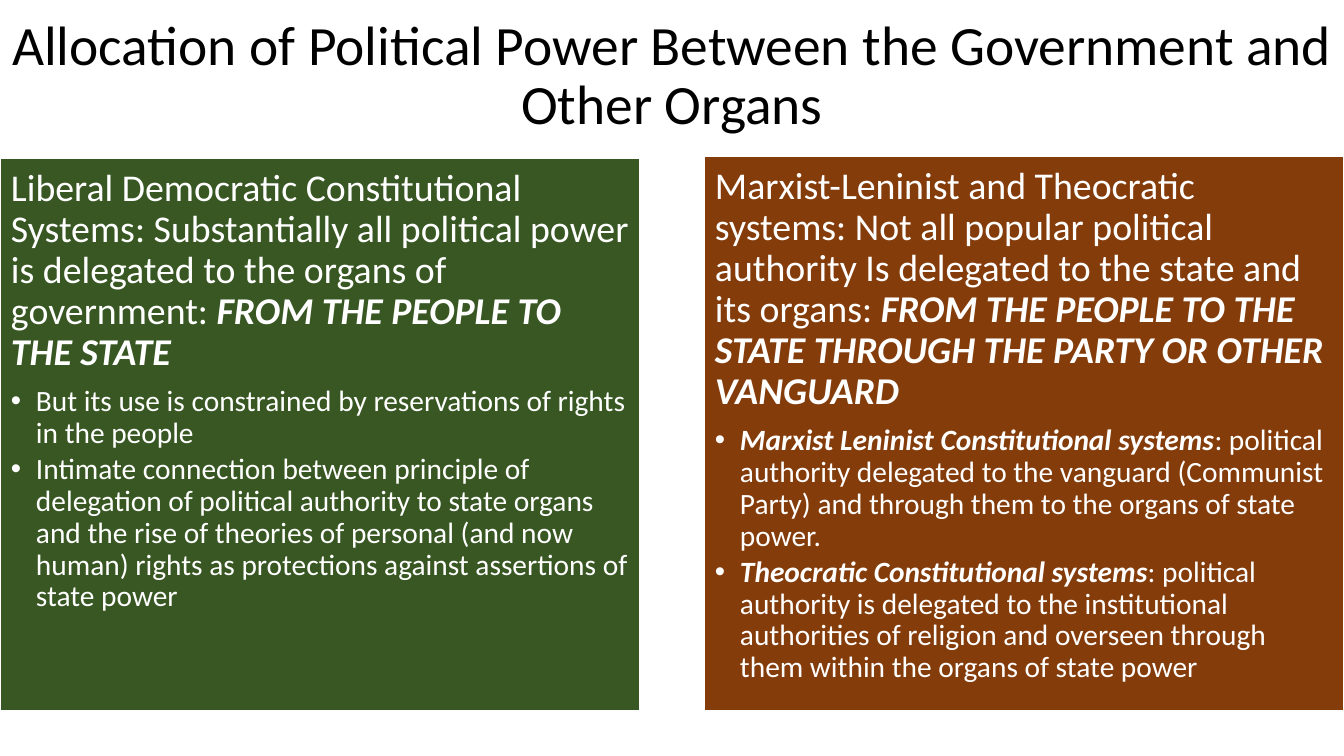
import dataclasses

import lxml.etree
import pptx
import pptx.dml.color
import pptx.enum.text
import pptx.oxml.ns
import pptx.util

EMU_PER_PX = 914400 / 100.8
SLIDE_WIDTH, SLIDE_HEIGHT = 1344, 756
TWO_CONTENT_LAYOUT = 3


@dataclasses.dataclass(frozen=True)
class Theme:
    font: str = "Calibri"
    black: str = "000000"
    white: str = "FFFFFF"
    green: str = "385723"
    brown: str = "843C0B"
    title_size: float = 39.6
    heading_size: float = 27
    bullet_size: float = 21


def px(length):
    return pptx.util.Emu(round(length * EMU_PER_PX))


def rgb(color):
    return pptx.dml.color.RGBColor.from_string(color)


def apply_format(target, values):
    for name, value in values.items():
        setattr(target, name, value)


class SlideBuilder:
    def __init__(self, presentation, theme):
        self.theme = theme
        layout = presentation.slide_layouts[TWO_CONTENT_LAYOUT]
        self.slide = presentation.slides.add_slide(layout)

    def place(self, index, box, margin, anchor):
        shape = self.slide.placeholders[index]
        apply_format(shape, dict(zip(("left", "top", "width", "height"), map(px, box))))
        sides = ("margin_left", "margin_top", "margin_right", "margin_bottom")
        apply_format(shape.text_frame, {
            "word_wrap": True,
            "auto_size": pptx.enum.text.MSO_AUTO_SIZE.NONE,
            "vertical_anchor": anchor,
            **dict.fromkeys(sides, px(margin)),
        })
        return shape

    def add_run(self, paragraph, text, size, color, strong=False):
        run = paragraph.add_run()
        run.text = text
        apply_format(run.font, {
            "name": self.theme.font,
            "size": pptx.util.Pt(size),
            "bold": strong,
            "italic": strong,
        })
        run.font.color.rgb = rgb(color)

    def title(self, text, box):
        shape = self.place(0, box, 10, pptx.enum.text.MSO_ANCHOR.MIDDLE)
        paragraph = shape.text_frame.paragraphs[0]
        apply_format(paragraph, {"alignment": pptx.enum.text.PP_ALIGN.CENTER, "line_spacing": 0.9})
        self.add_run(paragraph, text, self.theme.title_size, self.theme.black)

    def set_bullet(self, paragraph, bulleted):
        indent = px(25) if bulleted else 0
        properties = paragraph._p.get_or_add_pPr()
        properties.set("marL", str(indent))
        properties.set("indent", str(-indent))
        qualified = pptx.oxml.ns.qn
        if bulleted:
            lxml.etree.SubElement(properties, qualified("a:buFont")).set("typeface", "Arial")
            lxml.etree.SubElement(properties, qualified("a:buChar")).set("char", "•")
        else:
            lxml.etree.SubElement(properties, qualified("a:buNone"))

    def panel(self, index, box, fill, paragraphs):
        shape = self.place(index, box, 11, pptx.enum.text.MSO_ANCHOR.TOP)
        shape.fill.solid()
        shape.fill.fore_color.rgb = rgb(fill)
        shape.line.color.rgb = rgb(self.theme.white)
        shape.line.width = pptx.util.Pt(1)

        # The first paragraph is the heading, the others are bullets
        frame = shape.text_frame
        for position, runs in enumerate(paragraphs):
            bulleted = position > 0
            paragraph = frame.add_paragraph() if bulleted else frame.paragraphs[0]
            size = self.theme.bullet_size if bulleted else self.theme.heading_size
            self.set_bullet(paragraph, bulleted)
            apply_format(paragraph, {
                "level": int(bulleted),
                "alignment": pptx.enum.text.PP_ALIGN.LEFT,
                "line_spacing": 0.9,
                "space_before": pptx.util.Pt(0),
                "space_after": pptx.util.Pt(size * (0.15 if bulleted else 0.35)),
            })
            for text, strong in runs:
                self.add_run(paragraph, text, size, self.theme.white, strong)


LIBERAL_DEMOCRATIC = [
    [("Liberal Democratic Constitutional Systems: Substantially all political power is "
      "delegated to the organs of government: ", False),
     ("FROM THE PEOPLE TO THE STATE", True)],
    [("But its use is constrained by reservations of rights in the people", False)],
    [("Intimate connection between principle of delegation of political authority to state "
      "organs and the rise of theories of personal (and now human) rights as protections "
      "against assertions of state power", False)],
]

MARXIST_AND_THEOCRATIC = [
    [("Marxist-Leninist and Theocratic systems: Not all popular political authority Is "
      "delegated to the state and its organs: ", False),
     ("FROM THE PEOPLE TO THE STATE THROUGH THE PARTY OR OTHER VANGUARD", True)],
    [("Marxist Leninist Constitutional systems", True),
     (": political authority delegated to the vanguard (Communist Party) and through them "
      "to the organs of state power.", False)],
    [("Theocratic Constitutional systems", True),
     (": political authority is delegated to the institutional authorities of religion and "
      "overseen through them within the organs of state power", False)],
]


def main():
    theme = Theme()
    presentation = pptx.Presentation()
    apply_format(presentation, {"slide_width": px(SLIDE_WIDTH), "slide_height": px(SLIDE_HEIGHT)})
    builder = SlideBuilder(presentation, theme)

    # Title
    builder.title("Allocation of Political Power Between the Government and Other Organs",
                  (0, 0, SLIDE_WIDTH, 154))

    # Two facing panels
    builder.panel(1, (0, 158, 640, 553), theme.green, LIBERAL_DEMOCRATIC)
    builder.panel(2, (704, 156, 640, 555), theme.brown, MARXIST_AND_THEOCRATIC)

    presentation.save("out.pptx")


if __name__ == "__main__":
    main()
